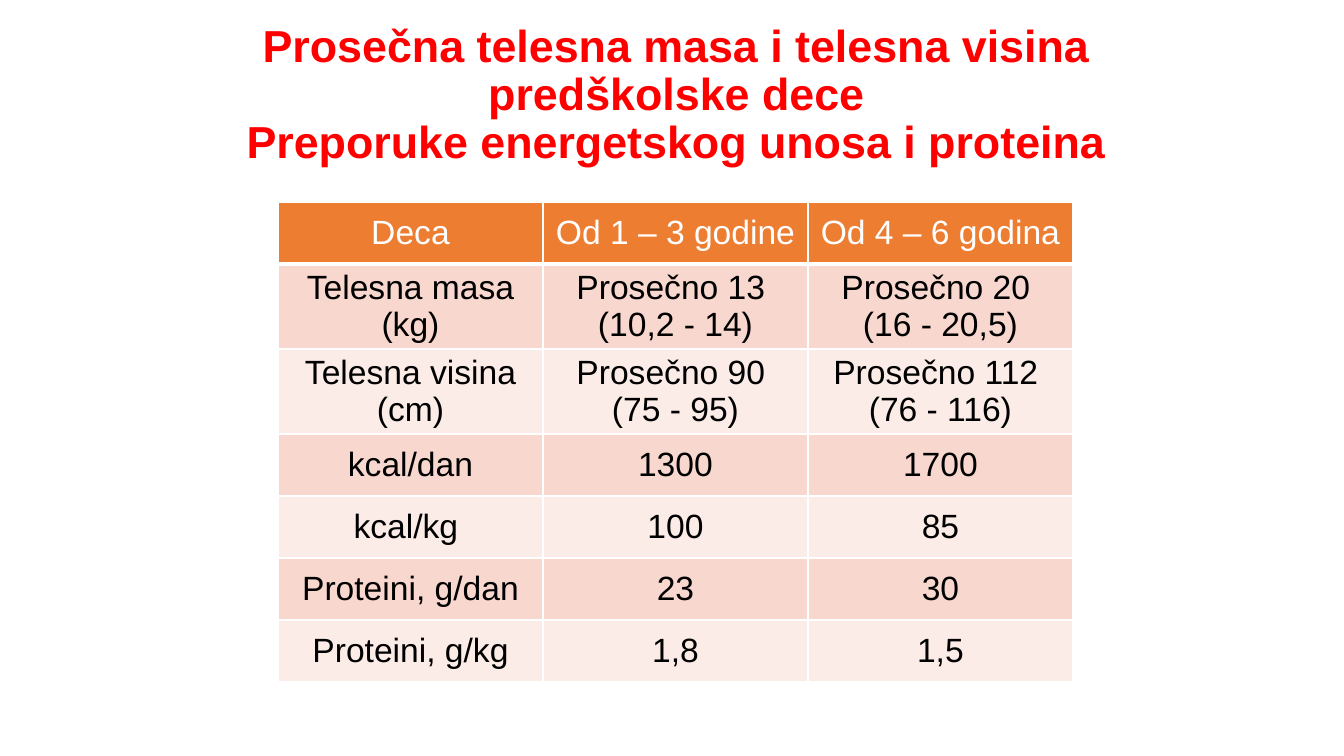
import pptx
import pptx.dml.color
import pptx.enum.text
import pptx.oxml
import pptx.oxml.ns
import pptx.util

HEADING = ("Prosečna telesna masa i telesna visina predškolske dece\v"
           "Preporuke energetskog unosa i proteina")
ROWS = [
    ("Deca", "Od 1 – 3 godine", "Od 4 – 6 godina"),
    ("Telesna masa (kg)", "Prosečno 13 \n(10,2 - 14)", "Prosečno 20 \n(16 - 20,5)"),
    ("Telesna visina (cm)", "Prosečno 90 \n(75 - 95)", "Prosečno 112 \n(76 - 116)"),
    ("kcal/dan", "1300", "1700"),
    ("kcal/kg ", "100", "85"),
    ("Proteini, g/dan", "23", "30"),
    ("Proteini, g/kg", "1,8", "1,5"),
]
FONT = "Arial"
RED, WHITE, BLACK = "FF0000", "FFFFFF", "000000"
HEADER_FILL, BAND_FILLS = "ED7D31", ("FCECE8", "F8D7CE")
COLUMN_WIDTH, SINGLE_ROW, DOUBLE_ROW = 265, 62, 85
MIDDLE = pptx.enum.text.MSO_ANCHOR.MIDDLE


def px(length):
    return pptx.util.Emu(round(length * 914400 / 100.8))


def color(value):
    return pptx.dml.color.RGBColor.from_string(value)


def format_text(frame, size, text_color, bold=False):
    for paragraph in frame.paragraphs:
        paragraph.alignment = pptx.enum.text.PP_ALIGN.CENTER
        for run in paragraph.runs:
            run.font.name = FONT
            run.font.size = pptx.util.Pt(size)
            run.font.bold = bold
            run.font.color.rgb = color(text_color)


def add_borders(cell, bottom_width):
    properties = cell._tc.get_or_add_tcPr()
    widths = {"lnL": 1, "lnR": 1, "lnT": 1, "lnB": bottom_width}
    for position, (side, width) in enumerate(widths.items()):
        properties.insert(position, pptx.oxml.parse_xml(
            f'<a:{side} {pptx.oxml.ns.nsdecls("a")} w="{pptx.util.Pt(width)}">'
            f'<a:solidFill><a:srgbClr val="{WHITE}"/></a:solidFill></a:{side}>'))


def add_heading(slide):
    heading = slide.shapes.title
    heading.left, heading.top, heading.width, heading.height = map(px, (219, 27, 915, 138))
    frame = heading.text_frame
    frame.text = HEADING
    frame.word_wrap = True
    frame.auto_size = pptx.enum.text.MSO_AUTO_SIZE.NONE
    frame.vertical_anchor = MIDDLE
    frame.paragraphs[0].line_spacing = 0.9
    format_text(frame, 32, RED, bold=True)


def add_recommendations(slide):
    heights = [DOUBLE_ROW if "\n" in row[1] else SINGLE_ROW for row in ROWS]
    columns = len(ROWS[0])
    recommendations = slide.shapes.add_table(
        len(ROWS), columns, px(278), px(202),
        px(COLUMN_WIDTH * columns), px(sum(heights))).table
    for column in recommendations.columns:
        column.width = px(COLUMN_WIDTH)
    for index, (values, height) in enumerate(zip(ROWS, heights)):
        recommendations.rows[index].height = px(height)
        is_header = index == 0
        for column, value in enumerate(values):
            cell = recommendations.cell(index, column)
            cell.text_frame.text = value
            cell.vertical_anchor = MIDDLE
            cell.fill.solid()
            cell.fill.fore_color.rgb = color(HEADER_FILL if is_header else BAND_FILLS[index % 2])
            format_text(cell.text_frame, 24, WHITE if is_header else BLACK)
            add_borders(cell, 3 if is_header else 1)


def main():
    """Build the slide on weight, height, energy and protein for preschool children."""
    deck = pptx.Presentation()
    deck.slide_width, deck.slide_height = px(1344), px(756)
    slide = deck.slides.add_slide(deck.slide_layouts[5])
    add_heading(slide)
    add_recommendations(slide)
    deck.save("out.pptx")


if __name__ == "__main__":
    main()
